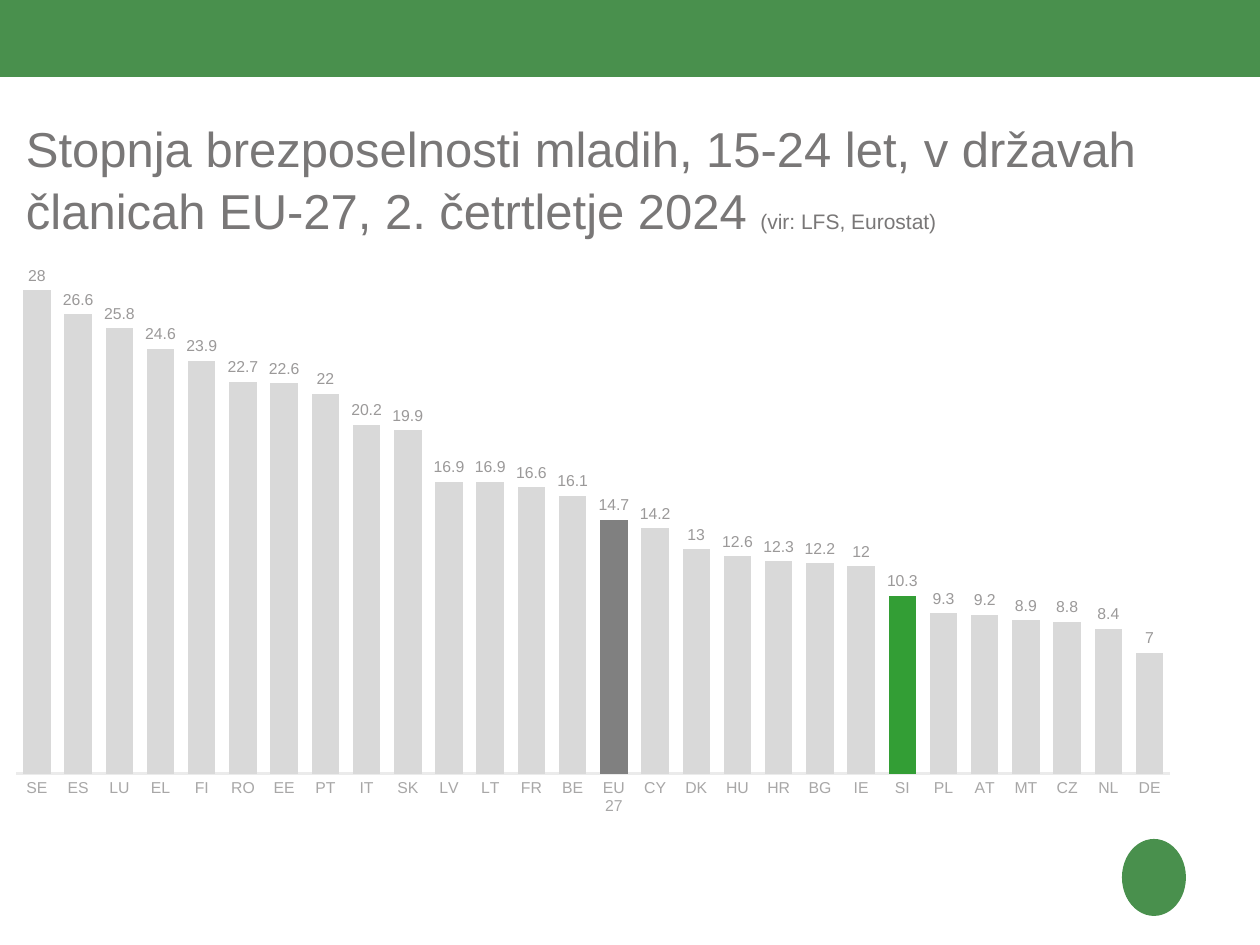
"""Build a slide charting youth unemployment rates across the EU-27."""
from dataclasses import dataclass

from pptx import Presentation
from pptx.chart.data import CategoryChartData
from pptx.dml.color import RGBColor as Rgb
from pptx.enum.chart import XL_CHART_TYPE as ChartType
from pptx.enum.chart import XL_LABEL_POSITION as LabelPosition
from pptx.enum.chart import XL_TICK_LABEL_POSITION as TickLabels
from pptx.enum.chart import XL_TICK_MARK as TickMark
from pptx.enum.shapes import MSO_SHAPE as Preset
from pptx.enum.text import MSO_ANCHOR as Anchor
from pptx.enum.text import MSO_AUTO_SIZE as AutoSize
from pptx.enum.text import PP_ALIGN as Align
from pptx.oxml import parse_xml
from pptx.util import Emu, Pt


@dataclass(frozen=True)
class Theme:
    """Colours, font and type sizes."""
    font: str = "Arial"
    brand: Rgb = Rgb(0x49, 0x90, 0x4D)
    title: Rgb = Rgb(0x79, 0x77, 0x77)
    axis_text: Rgb = Rgb(0xA8, 0xA7, 0xA7)
    value_text: Rgb = Rgb(0x9B, 0x99, 0x99)
    axis_line: Rgb = Rgb(0xEB, 0xEB, 0xEB)
    country: Rgb = Rgb(0xD9, 0xD9, 0xD9)
    average: Rgb = Rgb(0x80, 0x80, 0x80)
    slovenia: Rgb = Rgb(0x33, 0x9E, 0x35)
    title_size: Pt = Pt(28)
    source_size: Pt = Pt(12)
    chart_size: Pt = Pt(10)
    label_size: Pt = Pt(9)


def px(*lengths):
    """Turn pixel lengths into EMU."""
    return [Emu(round(length * 914400 / 126)) for length in lengths]


def style(font, size, color):
    """Give a font the theme face with a size and colour."""
    font.name, font.size, font.color.rgb = theme.font, size, color


theme = Theme()
RATES = {
    "SE": 28, "ES": 26.6, "LU": 25.8, "EL": 24.6, "FI": 23.9, "RO": 22.7, "EE": 22.6,
    "PT": 22, "IT": 20.2, "SK": 19.9, "LV": 16.9, "LT": 16.9, "FR": 16.6, "BE": 16.1,
    "EU 27": 14.7, "CY": 14.2, "DK": 13, "HU": 12.6, "HR": 12.3, "BG": 12.2, "IE": 12,
    "SI": 10.3, "PL": 9.3, "AT": 9.2, "MT": 8.9, "CZ": 8.8, "NL": 8.4, "DE": 7,
}
HIGHLIGHTS = {"EU 27": theme.average, "SI": theme.slovenia}

deck = Presentation()
deck.slide_width, deck.slide_height = px(1260, 945)
slide = deck.slides.add_slide(deck.slide_layouts[5])

header_band = (Preset.RECTANGLE, 0, -1, 1260, 78)
emblem = (Preset.OVAL, 1122, 839, 64, 77)
for preset, *bounds in (header_band, emblem):
    accent = slide.shapes.add_shape(preset, *px(*bounds))
    accent.shadow.inherit = False
    accent.fill.solid()
    accent.fill.fore_color.rgb = theme.brand
    accent.line.fill.background()

title = slide.shapes.title
title.left, title.top, title.width, title.height = px(26, 116, 1167, 89)
frame = title.text_frame
frame.margin_left = frame.margin_top = frame.margin_right = frame.margin_bottom = 0
frame.word_wrap, frame.auto_size = True, AutoSize.NONE
frame.vertical_anchor = Anchor.TOP
heading = frame.paragraphs[0]
heading.alignment, heading.line_spacing = Align.LEFT, 1.05
style(heading.font, theme.title_size, theme.title)
heading.add_run().text = (
    "Stopnja brezposelnosti mladih, 15-24 let, v državah "
    "članicah EU-27, 2. četrtletje 2024 ")
source = heading.add_run()
source.text = "(vir: LFS, Eurostat)"
source.font.size = theme.source_size

rates = CategoryChartData()
rates.categories = list(RATES)
rates.add_series("Series 1", list(RATES.values()))
chart = slide.shapes.add_chart(
    ChartType.COLUMN_CLUSTERED, *px(15, 244, 1167, 576), rates).chart
chart.has_legend = chart.has_title = False
style(chart.font, theme.chart_size, theme.title)

countries, percent = chart.category_axis, chart.value_axis
for axis in (countries, percent):
    axis.major_tick_mark = axis.minor_tick_mark = TickMark.NONE
    axis.has_major_gridlines = False
    style(axis.tick_labels.font, theme.label_size, theme.axis_text)
countries.format.line.color.rgb = theme.axis_line
countries.format.line.width = Pt(1.5)
percent.minimum_scale, percent.maximum_scale = 0, 30
percent.tick_label_position = TickLabels.NONE
percent.format.line.fill.background()

bars = chart.plots[0]
bars.gap_width, bars.overlap, bars.vary_by_categories = 50, -27, False
bars.has_data_labels = True
values = bars.data_labels
values.show_value, values.position = True, LabelPosition.OUTSIDE_END
values.number_format, values.number_format_is_linked = "General", False
style(values.font, theme.label_size, theme.value_text)

rate_series = bars.series[0]
rate_series.format.fill.solid()
rate_series.format.fill.fore_color.rgb = theme.country
for index, country in enumerate(RATES):
    if country in HIGHLIGHTS:
        highlight = rate_series.points[index].format.fill
        highlight.solid()
        highlight.fore_color.rgb = HIGHLIGHTS[country]

plot_area = chart.element.xpath("c:chart/c:plotArea")[0]
for automatic in plot_area.xpath("c:layout"):
    plot_area.remove(automatic)
plot_area.insert(0, parse_xml(
    '<c:layout xmlns:c="http://schemas.openxmlformats.org/drawingml/2006/chart">'
    '<c:manualLayout><c:layoutTarget val="inner"/>'
    '<c:xMode val="edge"/><c:yMode val="edge"/>'
    '<c:x val="0"/><c:y val="0.02"/><c:w val="0.99"/><c:h val="0.9"/>'
    '</c:manualLayout></c:layout>'))

deck.save("out.pptx")
